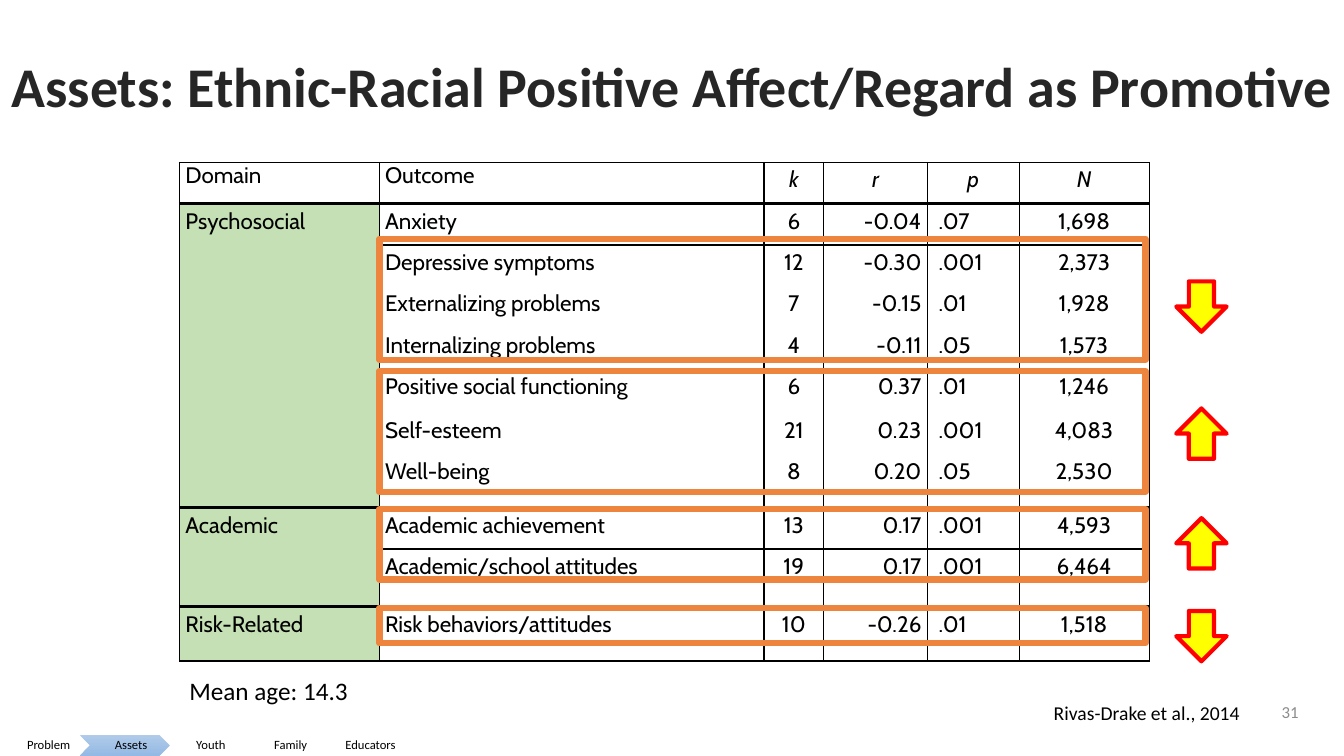
from dataclasses import dataclass
from itertools import accumulate
from lxml.etree import SubElement
from pptx import Presentation
from pptx.dml.color import RGBColor
from pptx.enum.shapes import MSO_SHAPE
from pptx.enum.text import MSO_ANCHOR, PP_ALIGN
from pptx.oxml.ns import qn
from pptx.util import Pt


@dataclass(frozen=True)
class Theme:
    """Colours, fonts and type sizes of the slide."""
    ink: str = "000000"
    title_ink: str = "262626"
    number_ink: str = "8C8C8C"
    domain: str = "C5E0B4"
    frame: str = "EE853F"
    arrow: str = "FFFF00"
    arrow_line: str = "FF0000"
    step: str = "FFFFFF"
    step_top: str = "B1CBE9"
    step_bottom: str = "93B9E4"
    font: str = "Calibri"
    table_font: str = "Cabin"
    title_size: float = 40
    note_size: float = 18
    table_size: float = 16
    source_size: float = 14
    number_size: float = 12
    step_size: float = 9
    thin: float = 1
    thick: float = 2.25


T = Theme()
NO_GRID_STYLE = "{2D5ABB26-0587-4C30-8999-92F81FD0307C}"
LEFT, CENTER, RIGHT = PP_ALIGN.LEFT, PP_ALIGN.CENTER, PP_ALIGN.RIGHT

COLUMNS = [(142.6, LEFT), (275, LEFT), (42.5, CENTER), (74.2, RIGHT), (65.5, LEFT), (92.9, CENTER)]
P_COLUMN = 4
HEADER = ["Domain", "Outcome", "k", "r", "p", "N"]
HEADER_HEIGHT = 29.5
DOMAINS = [
    ("Psychosocial", [
        (29.5, "Anxiety", "6", "-0.04", ".07", "1,698"),
        (29.5, "Depressive symptoms", "12", "-0.30", ".001", "2,373"),
        (29.5, "Externalizing problems", "7", "-0.15", ".01", "1,928"),
        (29.5, "Internalizing problems", "4", "-0.11", ".05", "1,573"),
        (31.7, "Positive social functioning", "6", "0.37", ".01", "1,246"),
        (29.5, "Self-esteem", "21", "0.23", ".001", "4,083"),
        (38.2, "Well-being", "8", "0.20", ".05", "2,530"),
    ]),
    ("Academic", [
        (29.5, "Academic achievement", "13", "0.17", ".001", "4,593"),
        (41, "Academic/school attitudes", "19", "0.17", ".001", "6,464"),
    ]),
    ("Risk-Related", [
        (38.9, "Risk behaviors/attitudes", "10", "-0.26", ".01", "1,518"),
    ]),
]
UP, DOWN = 270, 90
EFFECTS = [(54.6, 86.4, 85, DOWN), (149, 86.4, 175.7, UP), (247.6, 50.4, 254.1, UP), (318.2, 25.2, 320.4, DOWN)]
STEPS = ["Problem", "Assets", "Youth", "Family", "Educators"]
CURRENT_STEP = "Assets"


def rgb(code):
    """Turn a hex code into a colour."""
    return RGBColor.from_string(code)


def write(tf, text, size, color=T.ink, font=T.font, align=LEFT, spacing=1.0, bold=False, italic=False):
    """Fill the first paragraph of a text frame with one run."""
    p = tf.paragraphs[0]
    p.alignment, p.line_spacing = align, spacing
    r = p.add_run()
    r.text = text
    r.font.name, r.font.size, r.font.color.rgb = font, Pt(size), rgb(color)
    r.font.bold, r.font.italic = bold, italic


def add_label(s, box, text, size, anchor=MSO_ANCHOR.TOP, wrap=True, **style):
    """Add a text box in the given box."""
    tf = s.shapes.add_textbox(*map(Pt, box)).text_frame
    tf.word_wrap, tf.vertical_anchor = wrap, anchor
    write(tf, text, size, **style)


def add_plain_shape(s, kind, box, fill=None, line=None, width=0):
    """Add a preset shape without shadow, with optional fill and outline."""
    sp = s.shapes.add_shape(kind, *map(Pt, box))
    sp.shadow.inherit = False
    if fill:
        sp.fill.solid()
        sp.fill.fore_color.rgb = rgb(fill)
    else:
        sp.fill.background()
    if line:
        sp.line.color.rgb, sp.line.width = rgb(line), Pt(width)
    else:
        sp.line.fill.background()
    return sp


def set_borders(cell, **widths):
    """Draw the cell sides named L, R, T, B at the given widths."""
    tc_pr = cell._tc.get_or_add_tcPr()
    for side, width in widths.items():
        ln = SubElement(tc_pr, qn(f"a:ln{side}"), w=str(Pt(width)))
        SubElement(SubElement(ln, qn("a:solidFill")), qn("a:srgbClr"), val=T.ink)


def add_cell(cell, text, align, spacing=1.15, fill=None, indent=4.3, italic=False, **borders):
    """Set margins, borders, fill and text of one cell."""
    cell.margin_left, cell.margin_right = Pt(indent), Pt(4.3)
    cell.margin_top = cell.margin_bottom = 0
    set_borders(cell, L=T.thin, R=T.thin, **borders)
    if fill:
        cell.fill.solid()
        cell.fill.fore_color.rgb = rgb(fill)
    else:
        cell.fill.background()
    if text:
        write(cell.text_frame, text, T.table_size, font=T.table_font, align=align, spacing=spacing, italic=italic)


def add_outcomes(s, box):
    """Add the table of outcomes grouped by domain."""
    heights = [HEADER_HEIGHT] + [row[0] for _, rows in DOMAINS for row in rows]
    table = s.shapes.add_table(len(heights), len(COLUMNS), *map(Pt, box)).table
    table.first_row = table.horz_banding = False
    table._tbl.tblPr.find(qn("a:tableStyleId")).text = NO_GRID_STYLE
    for column, (width, _) in zip(table.columns, COLUMNS):
        column.width = Pt(width)
    for row, height in zip(table.rows, heights):
        row.height = Pt(height)
    for j, text in enumerate(HEADER):
        stat = j > 1
        add_cell(table.cell(0, j), text, CENTER if stat else LEFT, 1.15 if stat else 1.0,
                 italic=stat, T=T.thin, B=T.thick)
    starts = accumulate((len(rows) for _, rows in DOMAINS), initial=1)
    for start, (domain, rows) in zip(starts, DOMAINS):
        last = len(rows) - 1
        for i, (_, *values) in enumerate(rows):
            borders = ({"T": T.thick} if i == 0 else {}) | ({"B": T.thick} if i == last else {})
            for j, text in enumerate([domain if i == 0 else "", *values]):
                add_cell(table.cell(start + i, j), text, COLUMNS[j][1],
                         fill=None if j else T.domain, indent=8 if j == P_COLUMN else 4.3, **borders)
        if last:
            table.cell(start, 0).merge(table.cell(start + last, 0))


def add_effects(s, box):
    """Frame the significant outcomes of the table and point out their direction."""
    x, y, w, _ = box
    for frame_y, height, arrow_y, turn in EFFECTS:
        add_plain_shape(s, MSO_SHAPE.RECTANGLE, (x + 142.8, y + frame_y, 547.2, height), line=T.frame, width=4.5)
        arrow = add_plain_shape(s, MSO_SHAPE.RIGHT_ARROW, (x + w + 19.3, y + arrow_y, 36, 36),
                                T.arrow, T.arrow_line, 3)
        arrow.rotation = turn


def add_steps(s, box):
    """Add the progress strip with the current step shaded."""
    x, y, w, h = box
    pitch = w / len(STEPS)
    for i, step in enumerate(STEPS):
        kind = MSO_SHAPE.CHEVRON if i else MSO_SHAPE.PENTAGON
        sp = add_plain_shape(s, kind, (x + i * pitch, y, pitch * 1.25, h), T.step)
        if step == CURRENT_STEP:
            sp.fill.gradient()
            sp.fill.gradient_angle = 270
            for stop, color in zip(sp.fill.gradient_stops, (T.step_top, T.step_bottom)):
                stop.color.rgb = rgb(color)
        tf = sp.text_frame
        tf.word_wrap, tf.vertical_anchor = False, MSO_ANCHOR.MIDDLE
        tf.margin_left, tf.margin_right = Pt(3), Pt(1)
        tf.margin_top = tf.margin_bottom = Pt(2)
        write(tf, step, T.step_size, align=CENTER, spacing=0.9)


def main():
    """Build the slide and save it."""
    prs = Presentation()
    prs.slide_width, prs.slide_height = Pt(960), Pt(540)
    s = prs.slides.add_slide(prs.slide_layouts[6])
    table_box = (128.2, 116, 692.7, 356.3)
    add_label(s, (0, 28, 960, 72), "Assets: Ethnic-Racial Positive Affect/Regard as Promotive", T.title_size,
              MSO_ANCHOR.MIDDLE, wrap=False, color=T.title_ink, align=CENTER, spacing=0.9, bold=True)
    add_outcomes(s, table_box)
    add_label(s, (270.7, 496.8, 622, 24.2), "Rivas-Drake et al., 2014", T.source_size, align=RIGHT)
    add_label(s, (856.8, 494, 77.8, 28.8), "31", T.number_size, MSO_ANCHOR.MIDDLE,
              color=T.number_ink, align=RIGHT)
    add_effects(s, table_box)
    add_label(s, (128.2, 478.8, 131.8, 29), "Mean age: 14.3", T.note_size)
    add_steps(s, (0, 524.9, 285, 15.1))
    prs.save("out.pptx")


if __name__ == "__main__":
    main()
